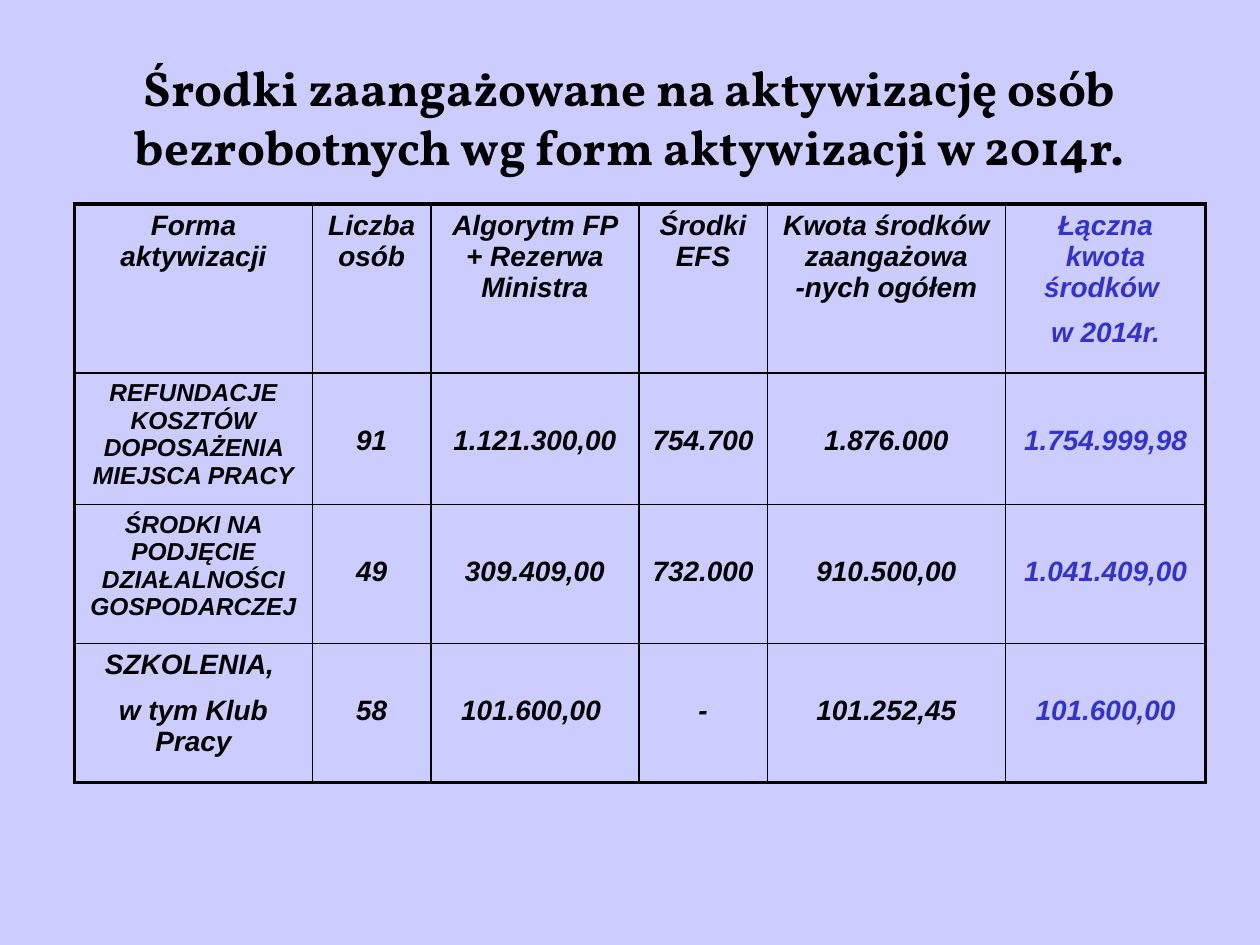
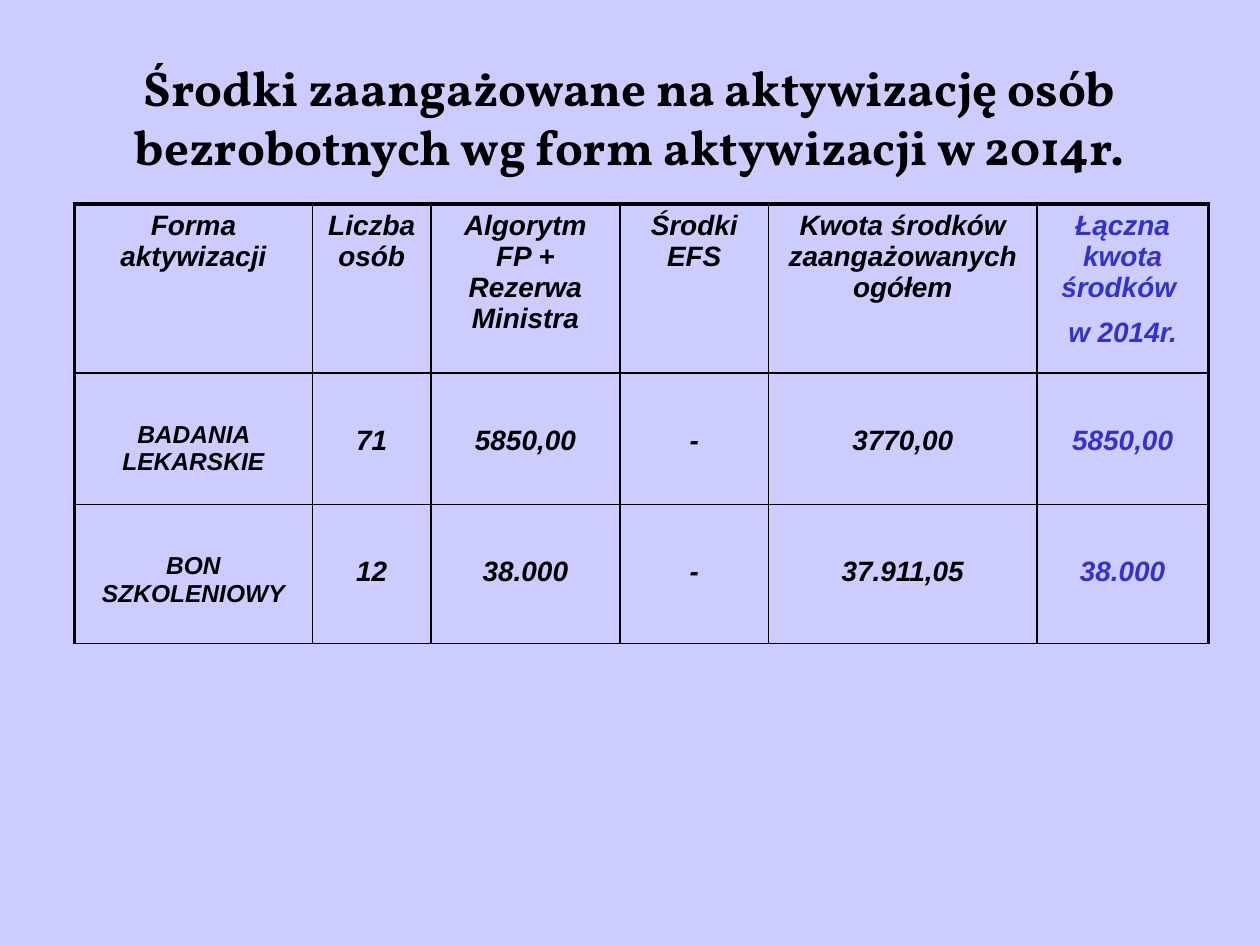
from dataclasses import dataclass
from lxml import etree
from pptx import Presentation
from pptx.dml.color import RGBColor
from pptx.enum.text import MSO_ANCHOR, MSO_AUTO_SIZE, PP_ALIGN
from pptx.oxml.ns import qn
from pptx.util import Inches, Pt

CENTER = PP_ALIGN.CENTER
TOP, MIDDLE = MSO_ANCHOR.TOP, MSO_ANCHOR.MIDDLE
NO_FIT = MSO_AUTO_SIZE.NONE


@dataclass(frozen=True)
class Theme:
    back: str = "CCCCFF"
    ink: str = "000000"
    total: str = "3333CC"
    serif: str = "Vollkorn"
    sans: str = "Arial"
    head: int = 28
    body: int = 16
    label: int = 14
    thick: float = 2.25
    thin: float = 1
    gap: int = 8


T = Theme()


def style(para, tint, **form):
    para.alignment = CENTER
    for run in para.runs:
        run.font.color.rgb = RGBColor.from_string(tint)
        for name, value in form.items():
            setattr(run.font, name, value)


def edge(cell, side, width):
    line = etree.SubElement(cell._tc.get_or_add_tcPr(), qn("a:ln" + side), w=str(Pt(width)))
    fill = etree.SubElement(line, qn("a:solidFill"))
    etree.SubElement(fill, qn("a:srgbClr"), val=T.ink)


# Content: column widths and row heights as shares of the slide
TITLE = "Środki zaangażowane na aktywizację osób bezrobotnych wg form aktywizacji w 2014r."
HEAD = ["Forma aktywizacji", "Liczba osób", "Algorytm FP + Rezerwa Ministra", "Środki EFS"]
LAST = "Łączna kwota środków \nw 2014r."
ROWS = [0.179, 0.139, 0.147, 0.147]

pages = [
    dict(
        cols=[0.189, 0.094, 0.165, 0.102, 0.189, 0.159],
        base=T.thick,
        drop=False,
        small=2,
        data=[
            HEAD + ["Kwota środków zaangażowa -nych ogółem", LAST],
            ["REFUNDACJE KOSZTÓW DOPOSAŻENIA MIEJSCA PRACY", "91", "1.121.300,00",
             "754.700", "1.876.000", "1.754.999,98"],
            ["ŚRODKI NA PODJĘCIE DZIAŁALNOŚCI GOSPODARCZEJ", "49", "309.409,00",
             "732.000 ", "910.500,00", "1.041.409,00"],
            ["SZKOLENIA, \nw tym Klub Pracy", "58", "101.600,00 ",
             "-", "101.252,45", "101.600,00"],
        ],
    ),
    dict(
        cols=[0.189, 0.094, 0.15, 0.118, 0.213, 0.136],
        base=T.thin,
        drop=True,
        small=2,
        data=[
            HEAD + ["Kwota środków zaangażowanych ogółem", LAST],
            ["BADANIA LEKARSKIE", "71", "5850,00", "-", "3770,00", "5850,00"],
            ["BON SZKOLENIOWY", "12", "38.000", "-", "37.911,05", "38.000"],
        ],
    ),
]

# Shared slide size and background
deck = Presentation()
deck.slide_width, deck.slide_height = Inches(10), Inches(7.5)
W, H = deck.slide_width, deck.slide_height
back = deck.slide_master.background.fill
back.solid()
back.fore_color.rgb = RGBColor.from_string(T.back)

for page in pages:
    slide = deck.slides.add_slide(deck.slide_layouts[5])

    # Title
    title = slide.shapes.title
    box = dict(left=0.05 * W, top=0.019 * H, width=0.899 * W, height=0.209 * H)
    for name, value in box.items():
        setattr(title, name, int(value))
    frame = title.text_frame
    frame.text = TITLE
    frame.auto_size = NO_FIT
    frame.vertical_anchor = MIDDLE
    style(frame.paragraphs[0], T.ink, name=T.serif, size=Pt(T.head), bold=True)

    # Table frame
    data, cols = page["data"], page["cols"]
    rows = ROWS[:len(data)]
    table = slide.shapes.add_table(
        len(rows), len(cols), int(0.059 * W), int(0.216 * H),
        int(sum(cols) * W), int(sum(rows) * H)).table
    table.first_row = table.horz_banding = False
    for col, share in zip(table.columns, cols):
        col.width = int(share * W)
    for row, share in zip(table.rows, rows):
        row.height = int(share * H)

    # Cells: values sit one line below the top of their row
    for r, line in enumerate(data):
        for c, text in enumerate(line):
            cell = table.cell(r, c)
            cell.text = text
            cell.vertical_anchor = TOP
            first, last = c == 0, c == len(cols) - 1
            small = first and 0 < r <= page["small"]
            size = T.label if small else T.body
            if r and (not first or page["drop"]):
                cell.margin_top = Inches(0.38 if small else 0.41)
            for para in cell.text_frame.paragraphs:
                para.space_before = Pt(T.gap)
                style(para, T.total if last else T.ink, name=T.sans,
                      size=Pt(size), bold=True, italic=True)
            edges = dict(
                L=T.thick if first else T.thin,
                R=T.thick if last else T.thin,
                T=T.thin if r else T.thick,
                B=page["base"] if r == len(rows) - 1 else T.thin)
            for side, width in edges.items():
                edge(cell, side, width)
            cell.fill.background()

deck.save("out.pptx")
